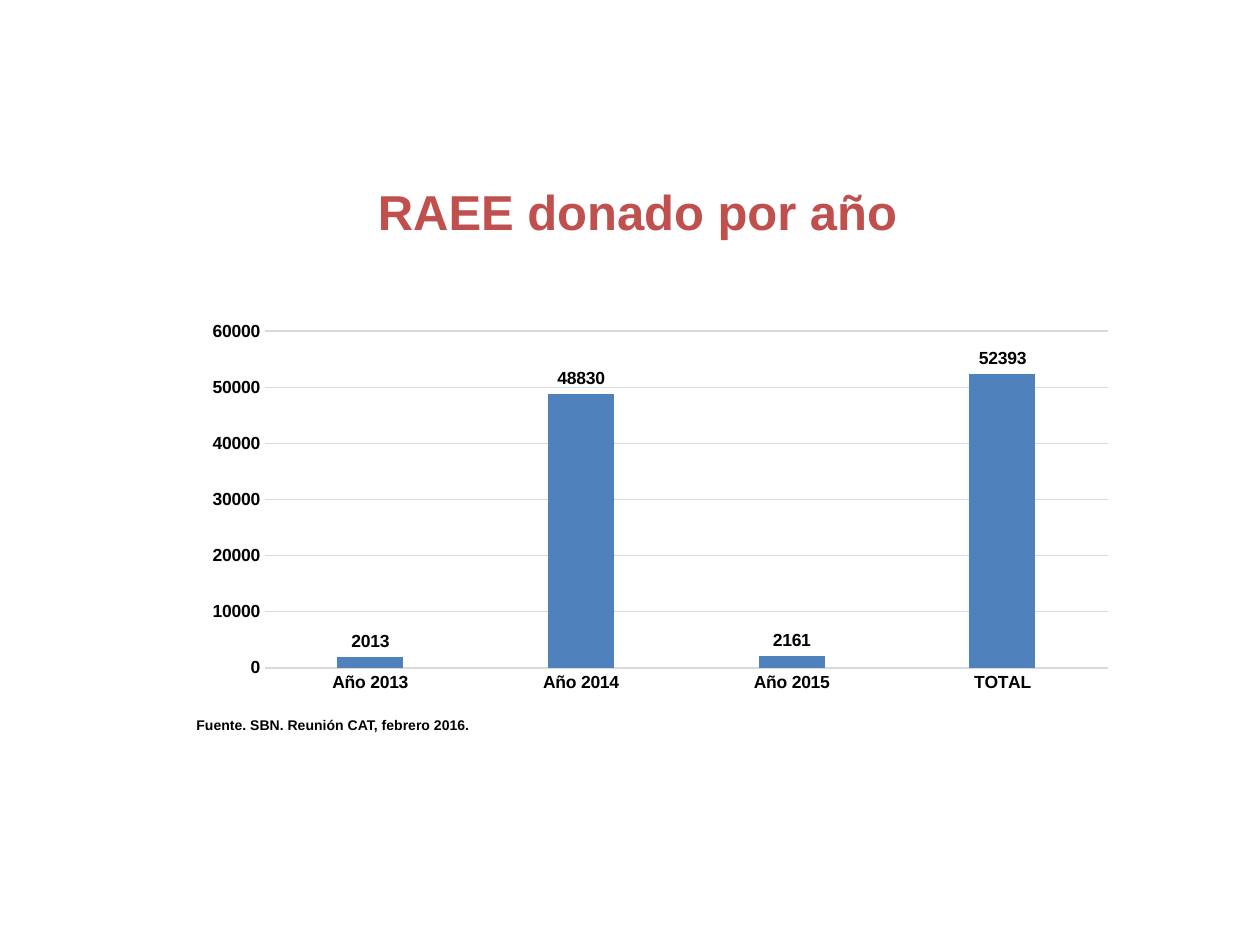
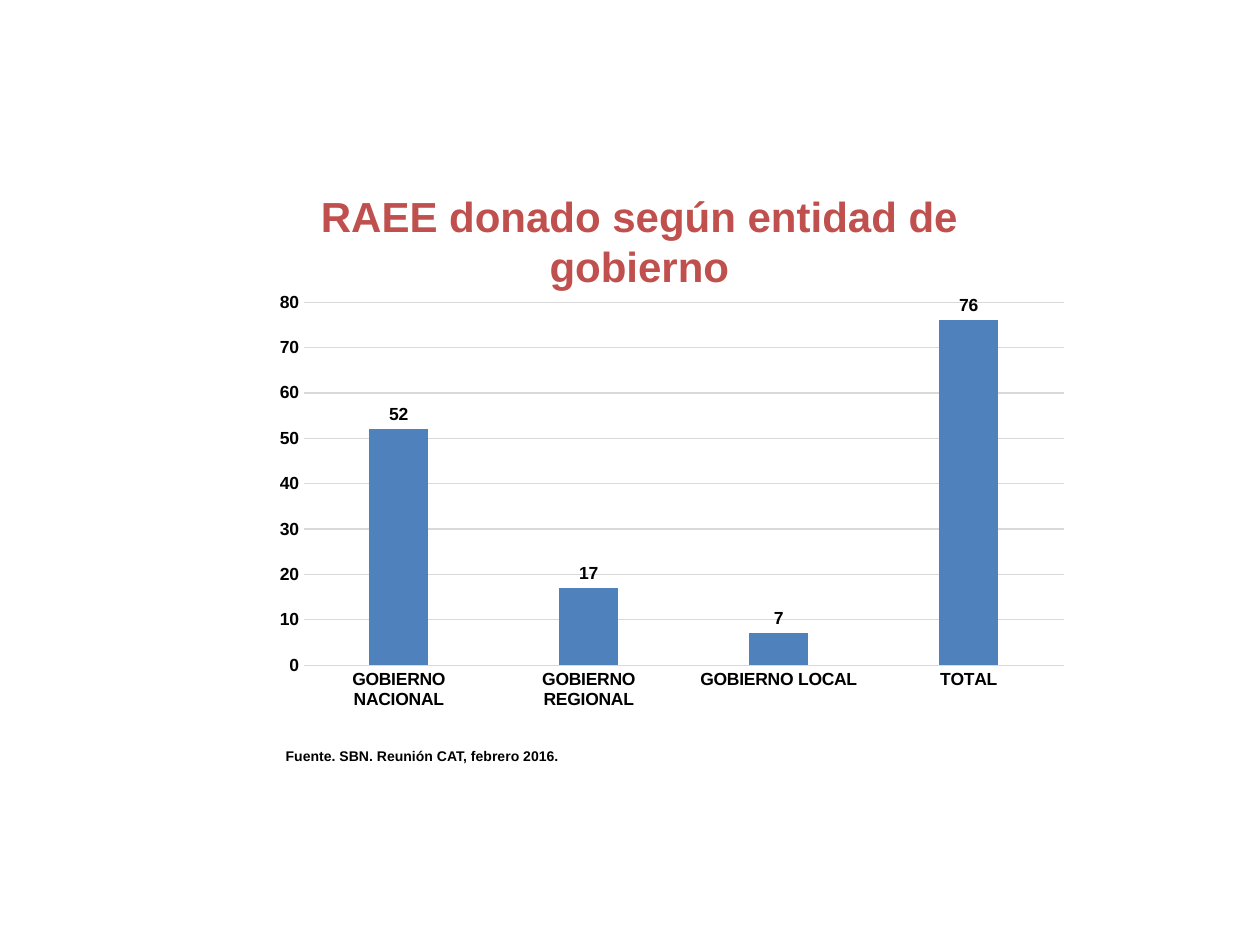
"""Build two slides of column charts on donated RAEE."""
from dataclasses import dataclass

from pptx import Presentation
from pptx.chart.data import CategoryChartData
from pptx.dml.color import RGBColor
from pptx.enum.chart import XL_CHART_TYPE, XL_LABEL_POSITION, XL_TICK_MARK
from pptx.enum.text import MSO_ANCHOR, MSO_AUTO_SIZE, PP_ALIGN
from pptx.util import Cm, Pt

COLUMN = XL_CHART_TYPE.COLUMN_CLUSTERED
OUTSIDE = XL_LABEL_POSITION.OUTSIDE_END
NO_TICK = XL_TICK_MARK.NONE
TOP = MSO_ANCHOR.TOP
GROW = MSO_AUTO_SIZE.SHAPE_TO_FIT_TEXT
LEFT, CENTER = PP_ALIGN.LEFT, PP_ALIGN.CENTER


@dataclass(frozen=True)
class Theme:
    font: str = "Arial"
    red: RGBColor = RGBColor(0xC0, 0x50, 0x4D)
    blue: RGBColor = RGBColor(0x4F, 0x81, 0xBD)
    grey: RGBColor = RGBColor(0xD9, 0xD9, 0xD9)
    black: RGBColor = RGBColor(0, 0, 0)
    chart: int = 10
    source: int = 8
    rule: float = 0.75


theme = Theme()
SOURCE = "Fuente. SBN. Reunión CAT, febrero 2016."
SLIDES = [
    {
        "title": "RAEE donado por año",
        "size": 28,
        "head": (7.16, 3.53, 11.38, 1.45),
        "plot": (3.91, 6.32, 18.8, 7.8),
        "foot": (3.71, 14.33, 8.79, 0.61),
        "data": {"Año 2013": 2013, "Año 2014": 48830, "Año 2015": 2161, "TOTAL": 52393},
        "top": 60000,
        "step": 10000,
    },
    {
        "title": "RAEE donado según entidad de gobierno",
        "size": 24,
        "head": (4.29, 3.71, 17.2, 1.27),
        "plot": (5.31, 5.72, 16.46, 8.76),
        "foot": (5.51, 14.94, 8.79, 0.61),
        "data": {"GOBIERNO NACIONAL": 52, "GOBIERNO REGIONAL": 17, "GOBIERNO LOCAL": 7, "TOTAL": 76},
        "top": 80,
        "step": 10,
    },
]


def style(font, size, color):
    font.name, font.size, font.bold = theme.font, Pt(size), True
    font.color.rgb = color


def write(shape, box, text, size, color, align):
    shape.left, shape.top, shape.width, shape.height = map(Cm, box)
    frame = shape.text_frame
    frame.word_wrap = True
    frame.auto_size = GROW
    frame.vertical_anchor = TOP
    para = frame.paragraphs[0]
    para.alignment = align
    run = para.add_run()
    run.text = text
    style(run.font, size, color)


deck = Presentation()
deck.slide_width, deck.slide_height = Cm(25.4), Cm(19.05)
layout = deck.slide_layouts.get_by_name("Title Only")

for item in SLIDES:
    slide = deck.slides.add_slide(layout)
    write(slide.shapes.title, item["head"], item["title"], item["size"], theme.red, CENTER)

    data = CategoryChartData()
    data.categories = list(item["data"])
    data.add_series("RAEE donado", list(item["data"].values()))
    chart = slide.shapes.add_chart(COLUMN, *map(Cm, item["plot"]), data).chart
    chart.has_title = chart.has_legend = False
    style(chart.font, theme.chart, theme.black)

    plot = chart.plots[0]
    plot.gap_width, plot.overlap = 219, -27
    plot.vary_by_categories = False
    fill = plot.series[0].format.fill
    fill.solid()
    fill.fore_color.rgb = theme.blue
    plot.has_data_labels = True
    labels = plot.data_labels
    labels.show_value = True
    labels.position = OUTSIDE
    style(labels.font, theme.chart, theme.black)

    names, scale = chart.category_axis, chart.value_axis
    for axis in (names, scale):
        axis.major_tick_mark = axis.minor_tick_mark = NO_TICK
    scale.minimum_scale, scale.maximum_scale = 0, item["top"]
    scale.major_unit = item["step"]
    scale.has_major_gridlines = True
    scale.format.line.fill.background()
    for line in (names.format.line, scale.major_gridlines.format.line):
        line.color.rgb = theme.grey
        line.width = Pt(theme.rule)

    foot = slide.shapes.add_textbox(*map(Cm, item["foot"]))
    write(foot, item["foot"], SOURCE, theme.source, theme.black, LEFT)

deck.save("out.pptx")
